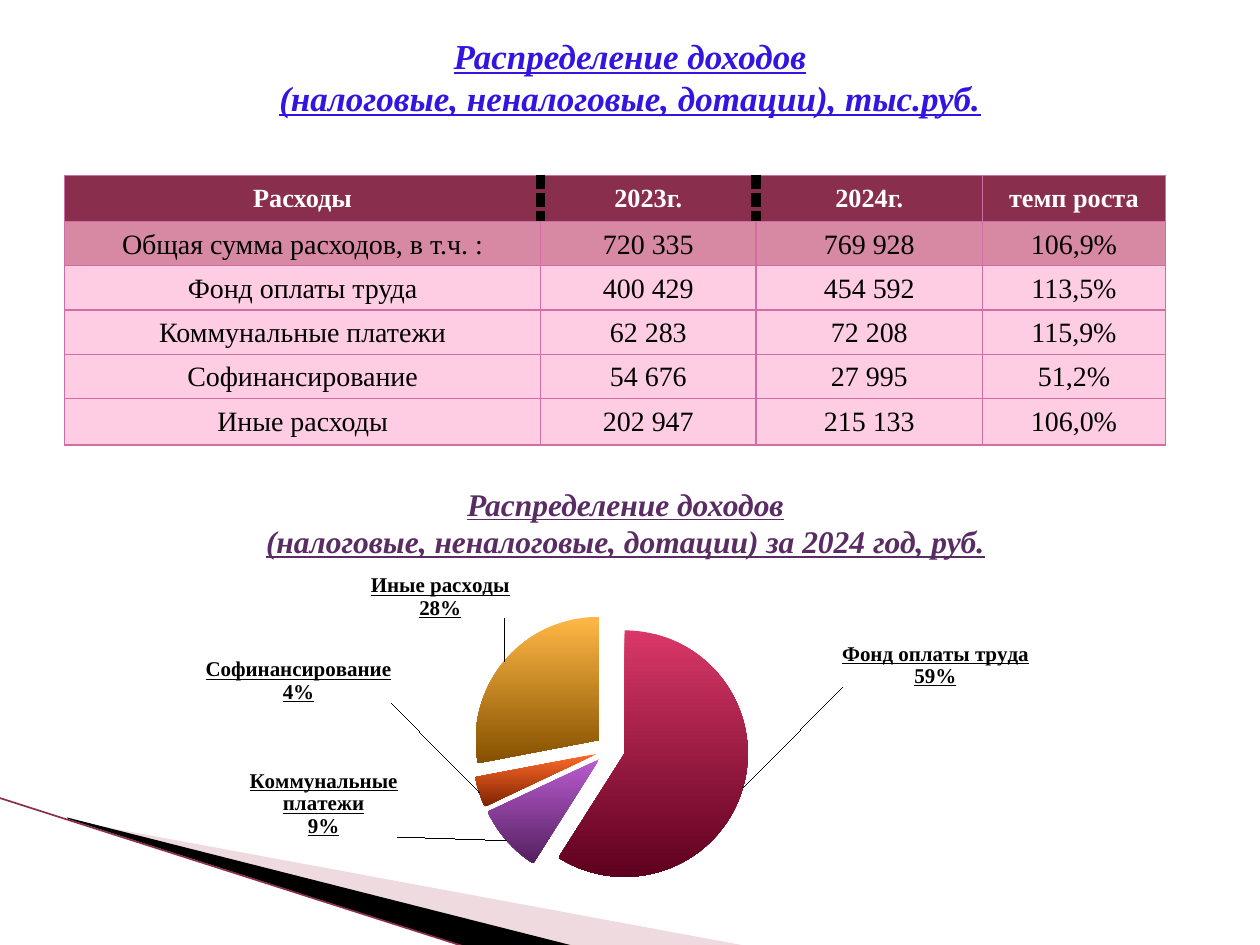
import dataclasses

import pptx
import pptx.chart.data
import pptx.dml.color
import pptx.enum.chart
import pptx.enum.dml
import pptx.enum.shapes
import pptx.enum.text
import pptx.oxml
import pptx.oxml.ns
import pptx.util
from lxml import etree

Cm = pptx.util.Cm
Pt = pptx.util.Pt
qn = pptx.oxml.ns.qn


@dataclasses.dataclass(frozen=True)
class Theme:
    font: str = "Times New Roman"
    chart_font: str = "Courier New"
    black: str = "000000"
    white: str = "FFFFFF"
    title: str = "3215E1"
    chart_title: str = "5A2C64"
    header: str = "8A2E4E"
    total: str = "D788A3"
    body: str = "FFCDE3"
    border: str = "CF6DA4"
    wedge: str = "D8A3AF"
    slices: tuple = (("D93868", "5E001F"), ("B95CD0", "55205F"),
                     ("FF6A2A", "802300"), ("FFB846", "855000"))
    title_size: int = 20
    chart_title_size: int = 18
    header_size: int = 15
    cell_size: int = 16
    label_size: int = 12


def rgb(color):
    return pptx.dml.color.RGBColor.from_string(color)


def manual_layout(x, y, **extra):
    layout = etree.Element(qn("c:layout"))
    manual = etree.SubElement(layout, qn("c:manualLayout"))
    for key, value in {**extra, "x": x, "y": y}.items():
        if key not in ("w", "h"):
            etree.SubElement(manual, qn(f"c:{key}")).set("val", str(value))
    for key in ("w", "h"):
        if key in extra:
            etree.SubElement(manual, qn(f"c:{key}")).set("val", str(extra[key]))
    return layout


class SlideBuilder:
    def __init__(self, slide, theme):
        self.slide = slide
        self.theme = theme

    def style_font(self, font, size, color, **flags):
        font.name = self.theme.font
        font.size = Pt(size)
        font.color.rgb = rgb(color)
        for flag, value in flags.items():
            setattr(font, flag, value)

    def heading(self, holder, box, lines, size, color):
        holder.left, holder.top, holder.width, holder.height = map(Cm, box)
        frame = holder.text_frame
        frame.text = "\n".join(lines)
        frame.word_wrap = True
        frame.auto_size = pptx.enum.text.MSO_AUTO_SIZE.NONE
        frame.vertical_anchor = pptx.enum.text.MSO_ANCHOR.MIDDLE
        for paragraph in frame.paragraphs:
            paragraph.alignment = pptx.enum.text.PP_ALIGN.CENTER
            for run in paragraph.runs:
                self.style_font(run.font, size, color, bold=True, italic=True, underline=True)

    def title(self, box, lines):
        self.heading(self.slide.shapes.title, box, lines,
                     self.theme.title_size, self.theme.title)

    def chart_title(self, box, lines):
        holder = self.slide.shapes.add_textbox(*map(Cm, box))
        self.heading(holder, box, lines, self.theme.chart_title_size, self.theme.chart_title)

    def wedge(self, points, color, opacity=100):
        start, *rest = [(Cm(x), Cm(y)) for x, y in points]
        builder = self.slide.shapes.build_freeform(*start)
        builder.add_line_segments(rest, close=True)
        outline = builder.convert_to_shape()
        outline.shadow.inherit = False
        outline.fill.solid()
        outline.fill.fore_color.rgb = rgb(color)
        outline.line.fill.background()
        if opacity < 100:
            tint = outline.fill._xPr.find(".//" + qn("a:srgbClr"))
            etree.SubElement(tint, qn("a:alpha")).set("val", str(opacity * 1000))

    def line(self, start, end, color, width):
        rule = self.slide.shapes.add_connector(
            pptx.enum.shapes.MSO_CONNECTOR.STRAIGHT, *map(Cm, start + end))
        rule.line.color.rgb = rgb(color)
        rule.line.width = Pt(width)
        etree.SubElement(rule._element.spPr, qn("a:effectLst"))

    def borders(self, cell, dashed):
        properties = cell._tc.get_or_add_tcPr()
        for index, side in enumerate("LRTB"):
            heavy = side in dashed
            edge = etree.Element(qn(f"a:ln{side}"), w=str(Pt(6 if heavy else 0.75)))
            fill = etree.SubElement(edge, qn("a:solidFill"))
            color = self.theme.black if heavy else self.theme.border
            etree.SubElement(fill, qn("a:srgbClr")).set("val", color)
            etree.SubElement(edge, qn("a:prstDash")).set("val", "lgDash" if heavy else "solid")
            properties.insert(index, edge)

    def table(self, box, widths, heights, rows):
        theme = self.theme
        grid = self.slide.shapes.add_table(len(rows), len(widths), *map(Cm, box)).table
        for column, width in zip(grid.columns, widths):
            column.width = Cm(width)
        for row, height in zip(grid.rows, heights):
            row.height = Cm(height)
        fills = [theme.header, theme.total] + [theme.body] * (len(rows) - 2)
        header_dashes = ("R", "LR", "L", "")
        for r, values in enumerate(rows):
            is_header = r == 0
            for c, value in enumerate(values):
                cell = grid.cell(r, c)
                cell.text_frame.text = value
                cell.vertical_anchor = pptx.enum.text.MSO_ANCHOR.MIDDLE
                cell.margin_left = cell.margin_right = cell.margin_top = Cm(0.03)
                cell.margin_bottom = 0
                cell.fill.solid()
                cell.fill.fore_color.rgb = rgb(fills[r])
                self.borders(cell, header_dashes[c] if is_header else "")
                paragraph = cell.text_frame.paragraphs[0]
                paragraph.alignment = pptx.enum.text.PP_ALIGN.CENTER
                self.style_font(paragraph.runs[0].font,
                                theme.header_size if is_header else theme.cell_size,
                                theme.white if is_header else theme.black, bold=is_header)

    def pie(self, box, shares, label_offsets):
        theme = self.theme
        data = pptx.chart.data.CategoryChartData(number_format="#,##0")
        data.categories = list(shares)
        data.add_series("Series 1", list(shares.values()))
        chart = self.slide.shapes.add_chart(
            pptx.enum.chart.XL_CHART_TYPE.PIE, *map(Cm, box), data).chart
        chart.has_title = chart.has_legend = False
        chart.font.name = theme.chart_font
        chart.font.size = Pt(18)
        chart.font.color.rgb = rgb(theme.black)
        plot = chart.plots[0]
        plot.vary_by_categories = True
        series = plot.series[0]
        explosion = etree.Element(qn("c:explosion"), val="12")
        series._element.find(qn("c:tx")).addnext(explosion)

        plot_area = chart._chartSpace.find(".//" + qn("c:plotArea"))
        for old in plot_area.findall(qn("c:layout")):
            plot_area.remove(old)
        plot_area.insert(0, manual_layout(0.38, 0.1, layoutTarget="inner", xMode="edge",
                                          yMode="edge", w=0.24, h=0.74))

        labels = series.data_labels
        labels.show_value = False
        labels.show_category_name = labels.show_percentage = True
        labels.number_format = "0%"
        labels.number_format_is_linked = False
        self.style_font(labels.font, theme.label_size, theme.black, bold=True, underline=True)
        for index, (stops, offset) in enumerate(zip(theme.slices, label_offsets)):
            point = series.points[index]
            fill = point.format.fill
            fill.gradient()
            fill.gradient_angle = 270
            for stop, color in zip(fill.gradient_stops, stops):
                stop.color.rgb = rgb(color)
            label = point.data_label
            label.position = pptx.enum.chart.XL_LABEL_POSITION.OUTSIDE_END
            self.style_font(label.font, theme.label_size, theme.black, bold=True, underline=True)
            element = series._element.findall(".//" + qn("c:dLbl"))[index]
            element.insert(1, manual_layout(*offset))
            for flag, shown in (("showVal", 0), ("showCatName", 1), ("showPercent", 1)):
                element.find(qn(f"c:{flag}")).set("val", str(shown))


def main():
    deck = pptx.Presentation()
    deck.slide_width, deck.slide_height = Cm(25.4), Cm(19.05)
    theme = Theme()
    builder = SlideBuilder(deck.slides.add_slide(deck.slide_layouts[5]), theme)

    builder.wedge([(1.4, 16.54), (15.11, 19.08), (11.58, 19.08), (1.4, 16.51)], theme.wedge, 40)
    builder.wedge([(1.35, 16.48), (11.61, 19.08), (9.45, 19.1), (1.37, 16.51)], theme.black)
    builder.line((-0.03, 16.08), (9.42, 19.1), theme.header, 0.95)

    subject = "Распределение доходов"
    sources = "(налоговые, неналоговые, дотации)"
    builder.title((1.5, 0.74, 22.4, 1.6), [subject, f"{sources}, тыс.руб."])
    builder.chart_title((0.71, 9.53, 23.8, 2), [subject, f"{sources} за 2024 год, руб."])

    expenses = [
        ("Расходы", "2023г.", "2024г.", "темп роста"),
        ("Общая сумма расходов, в т.ч. :", "720 335", "769 928", "106,9%"),
        ("Фонд оплаты труда", "400 429", "454 592", "113,5%"),
        ("Коммунальные платежи", "62 283", "72 208", "115,9%"),
        ("Софинансирование", "54 676", "27 995", "51,2%"),
        ("Иные расходы", "202 947", "215 133", "106,0%"),
    ]
    builder.table((1.3, 3.53, 22.19, 5.41), (9.6, 4.34, 4.57, 3.68),
                  [0.94] + [0.89] * 4 + [0.94], expenses)

    shares = dict(zip([row[0] for row in expenses[2:]], (59, 9, 4, 28)))
    builder.pie((0.71, 11.53, 23.19, 7.62), shares,
                [(0.08, -0.39), (-0.09, -0.2), (-0.07, -0.36), (0.01, -0.1)])
    deck.save("out.pptx")


if __name__ == "__main__":
    main()
